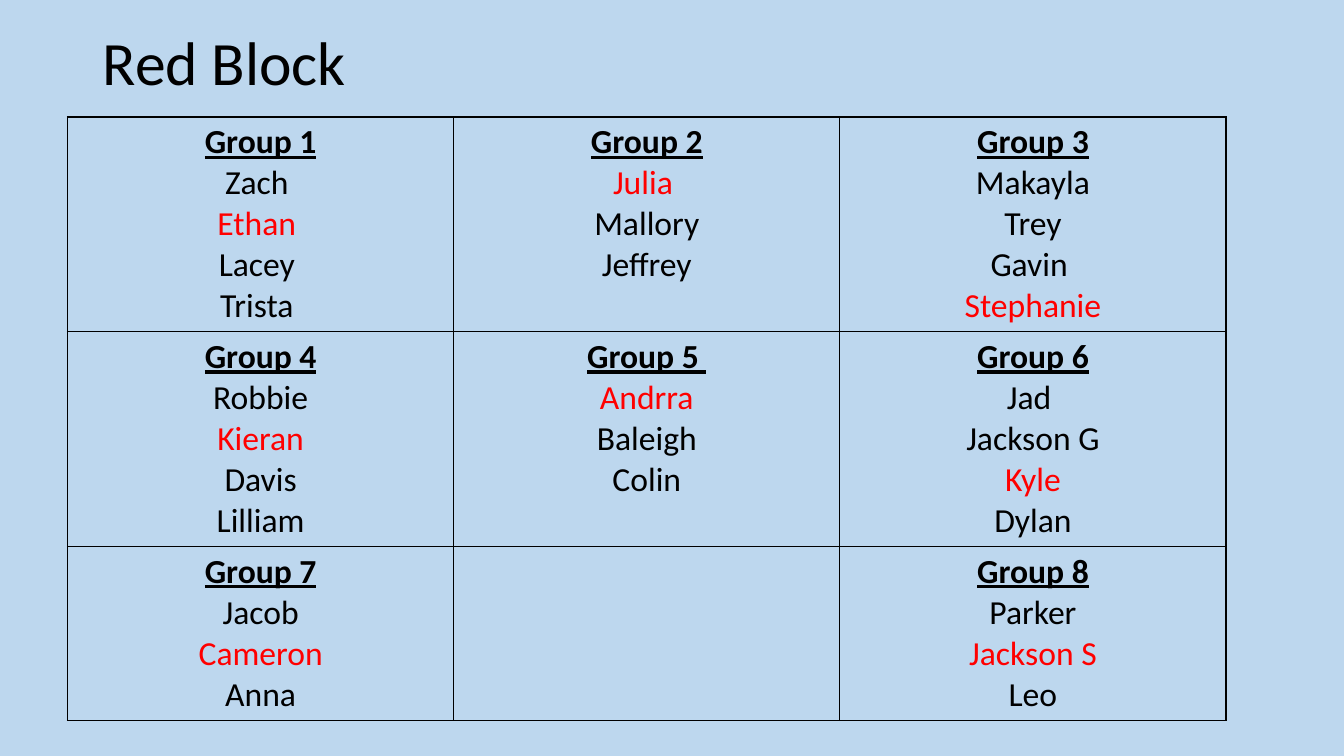
import pptx
import pptx.dml.color
import pptx.enum.text
import pptx.oxml
import pptx.oxml.ns
import pptx.util
from pptx.util import Inches

FONT = "Calibri"
BLACK, RED, SKY = "000000", "FF0000", "BDD7EE"

# Each cell: heading, members, member shown in red
GROUPS = [
    [("Group 1", ["Zach ", "Ethan ", "Lacey ", "Trista "], "Ethan "),
     ("Group 2", ["Julia ", "Mallory", "Jeffrey"], "Julia "),
     ("Group 3", ["Makayla", "Trey", "Gavin ", "Stephanie"], "Stephanie")],
    [("Group 4", ["Robbie", "Kieran", "Davis", "Lilliam"], "Kieran"),
     ("Group 5 ", ["Andrra", "Baleigh", "Colin"], "Andrra"),
     ("Group 6", ["Jad ", "Jackson G", "Kyle", "Dylan"], "Kyle")],
    [("Group 7", ["Jacob", "Cameron", "Anna"], "Cameron"),
     None,
     ("Group 8", ["Parker", "Jackson S", "Leo"], "Jackson S")],
]
ROW_HEIGHTS = [2.13, 2.13, 1.73]
COLUMN_WIDTH = 3.83


def rgb(value):
    return pptx.dml.color.RGBColor.from_string(value)


def style(p, size, color=BLACK, heading=False):
    p.font.name = FONT
    p.font.size = pptx.util.Pt(size)
    p.font.color.rgb = rgb(color)
    p.font.bold = heading
    p.font.underline = heading


def add_title(s, text):
    sp = s.shapes.add_textbox(Inches(0.92), Inches(0.14), Inches(11.5), Inches(1.01))
    tf = sp.text_frame
    tf.word_wrap = True
    tf.vertical_anchor = pptx.enum.text.MSO_ANCHOR.MIDDLE
    p = tf.paragraphs[0]
    p.text = text
    p.line_spacing = 0.9
    style(p, 44)


def set_borders(cell):
    props = cell._tc.get_or_add_tcPr()
    for index, side in enumerate(("lnL", "lnR", "lnT", "lnB")):
        props.insert(index, pptx.oxml.parse_xml(
            f'<a:{side} {pptx.oxml.ns.nsdecls("a")} w="12700"><a:solidFill>'
            f'<a:srgbClr val="{BLACK}"/></a:solidFill></a:{side}>'))


def fill_cell(cell, group):
    cell.fill.background()
    set_borders(cell)
    if group is None:
        return
    heading, members, red_member = group
    tf = cell.text_frame
    tf.text = "\n".join([heading, *members])
    for i, p in enumerate(tf.paragraphs):
        p.alignment = pptx.enum.text.PP_ALIGN.CENTER
        style(p, 24, RED if p.text == red_member else BLACK, heading=i == 0)


def add_group_table(s):
    columns = len(GROUPS[0])
    table = s.shapes.add_table(
        len(GROUPS), columns, Inches(0.67), Inches(1.16),
        Inches(COLUMN_WIDTH * columns), Inches(sum(ROW_HEIGHTS))).table
    table.first_row = False
    table.horz_banding = False
    for column in table.columns:
        column.width = Inches(COLUMN_WIDTH)
    for i, (height, groups) in enumerate(zip(ROW_HEIGHTS, GROUPS)):
        table.rows[i].height = Inches(height)
        for j, group in enumerate(groups):
            fill_cell(table.cell(i, j), group)


def main():
    prs = pptx.Presentation()
    prs.slide_width = Inches(13.33)
    prs.slide_height = Inches(7.5)
    s = prs.slides.add_slide(prs.slide_layouts[6])

    # Background
    s.background.fill.solid()
    s.background.fill.fore_color.rgb = rgb(SKY)

    # Title and groups
    add_title(s, "Red Block")
    add_group_table(s)
    prs.save("out.pptx")


if __name__ == "__main__":
    main()
